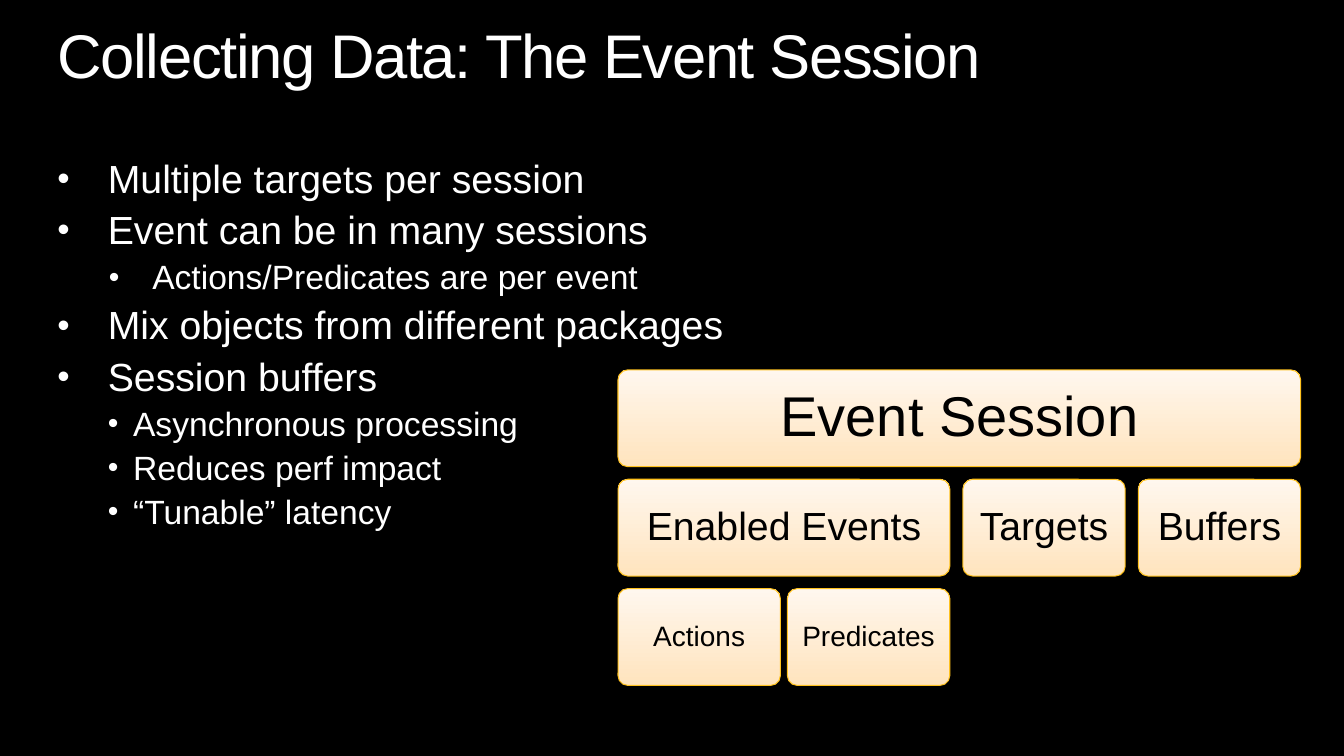
import pptx
import pptx.dml.color
import pptx.enum.shapes
import pptx.enum.text
import pptx.oxml.ns
import pptx.util
from lxml import etree

RGBColor = pptx.dml.color.RGBColor
BLACK = RGBColor(0x00, 0x00, 0x00)
WHITE = RGBColor(0xFF, 0xFF, 0xFF)
PEACH = RGBColor(0xFF, 0xE4, 0xBE)
CREAM = RGBColor(0xFF, 0xF7, 0xEE)
GOLD = RGBColor(0xFF, 0xC2, 0x1F)

# Slide size and diagram grid, in inches
WIDTH, HEIGHT = 13.33, 7.5
TILE_WIDTH, TILE_HEIGHT = 1.61, 0.96
INNER_GAP, GROUP_GAP, ROW_GAP = 0.07, 0.13, 0.125
GRID_LEFT, GRID_TOP = 6.13, 3.67

# Columns 0 and 1 sit together under the events; the others stand apart
COLUMNS = [GRID_LEFT]
for gap in (INNER_GAP, GROUP_GAP, GROUP_GAP):
    COLUMNS.append(COLUMNS[-1] + TILE_WIDTH + gap)

# Text size and inset for each diagram row
ROW_STYLES = [(40, 0.17), (28, 0.12), (20, 0.08)]

# Label, row, first column, last column
TILES = [
    ("Event Session", 0, 0, 3),
    ("Enabled Events", 1, 0, 1),
    ("Actions", 2, 0, 0),
    ("Predicates", 2, 1, 1),
    ("Targets", 1, 2, 2),
    ("Buffers", 1, 3, 3),
]

# Text, level, left margin, hanging indent
BULLETS = [
    ("Multiple targets per session", 0, 0.5, 0.5),
    ("Event can be in many sessions", 0, 0.5, 0.5),
    ("Actions/Predicates are per event", 1, 0.94, 0.43),
    ("Mix objects from different packages", 0, 0.5, 0.5),
    ("Session buffers", 0, 0.5, 0.5),
    ("Asynchronous processing", 1, 0.75, 0.25),
    ("Reduces perf impact", 1, 0.75, 0.25),
    ("“Tunable” latency", 1, 0.75, 0.25),
]
LEVEL_SIZES = [28, 24]


class SlideBuilder:
    def __init__(self, page, font_name="Arial", line_spacing=0.9):
        self.page = page
        self.font_name = font_name
        self.line_spacing = line_spacing

    def background(self, color):
        fill = self.page.background.fill
        fill.solid()
        fill.fore_color.rgb = color

    def style(self, para, size, color):
        para.line_spacing = self.line_spacing
        para.font.name = self.font_name
        para.font.size = pptx.util.Pt(size)
        para.font.color.rgb = color

    def inset(self, frame, inches):
        frame.word_wrap = True
        frame.margin_left = frame.margin_right = pptx.util.Inches(inches)
        frame.margin_top = frame.margin_bottom = pptx.util.Inches(inches)

    def text_box(self, left, top, width, height):
        """Add a box whose lengths are shares of the slide's size."""
        box = self.page.shapes.add_textbox(
            pptx.util.Inches(left * WIDTH), pptx.util.Inches(top * HEIGHT),
            pptx.util.Inches(width * WIDTH), pptx.util.Inches(height * HEIGHT))
        self.inset(box.text_frame, 0)
        return box.text_frame

    def title(self, text, *place):
        para = self.text_box(*place).paragraphs[0]
        span = para.add_run()
        span.text = text
        self.style(para, 44, WHITE)
        span._r.get_or_add_rPr().set("spc", "-100")

    def bullet_list(self, items, *place):
        frame = self.text_box(*place)
        for index, (text, level, margin, hang) in enumerate(items):
            para = frame.add_paragraph() if index else frame.paragraphs[0]
            para.text = text
            para.level = level
            self.bullet(para, margin, hang)
            self.style(para, LEVEL_SIZES[level], WHITE)
            if index:
                para.space_before = pptx.util.Pt(0.23 * LEVEL_SIZES[level])

    def bullet(self, para, margin, hang):
        properties = para._p.get_or_add_pPr()
        properties.set("marL", str(pptx.util.Inches(margin)))
        properties.set("indent", str(-pptx.util.Inches(hang)))
        for tag, key, value in (("a:buSzPct", "val", "90000"),
                                ("a:buFont", "typeface", self.font_name),
                                ("a:buChar", "char", "•")):
            etree.SubElement(properties, pptx.oxml.ns.qn(tag)).set(key, value)

    def tile(self, text, row, first, last):
        """Add a rounded box spanning grid columns first to last."""
        size, inset = ROW_STYLES[row]
        box = self.page.shapes.add_shape(
            pptx.enum.shapes.MSO_SHAPE.ROUNDED_RECTANGLE,
            pptx.util.Inches(COLUMNS[first]),
            pptx.util.Inches(GRID_TOP + row * (TILE_HEIGHT + ROW_GAP)),
            pptx.util.Inches(COLUMNS[last] + TILE_WIDTH - COLUMNS[first]),
            pptx.util.Inches(TILE_HEIGHT))
        box.adjustments[0] = 0.1
        box.shadow.inherit = False
        box.fill.gradient()
        box.fill.gradient_angle = 90
        for stop, color in zip(box.fill.gradient_stops, (PEACH, CREAM)):
            stop.color.rgb = color
        box.line.color.rgb = GOLD
        box.line.width = pptx.util.Pt(0.75)

        frame = box.text_frame
        self.inset(frame, inset)
        frame.vertical_anchor = pptx.enum.text.MSO_ANCHOR.MIDDLE
        para = frame.paragraphs[0]
        para.text = text
        para.alignment = pptx.enum.text.PP_ALIGN.CENTER
        self.style(para, size, BLACK)


def main():
    deck = pptx.Presentation()
    deck.slide_width = pptx.util.Inches(WIDTH)
    deck.slide_height = pptx.util.Inches(HEIGHT)
    builder = SlideBuilder(deck.slides.add_slide(deck.slide_layouts[6]))
    builder.background(BLACK)

    # Event session diagram
    for tile in TILES:
        builder.tile(*tile)

    # Title and bullets
    left, width = 0.57 / WIDTH, 12.19 / WIDTH
    builder.title("Collecting Data: The Event Session",
                  left, 0.25 / HEIGHT, width, 0.67 / HEIGHT)
    builder.bullet_list(BULLETS, left, 1.58 / HEIGHT, width, 3.9 / HEIGHT)

    deck.save("out.pptx")


if __name__ == "__main__":
    main()
